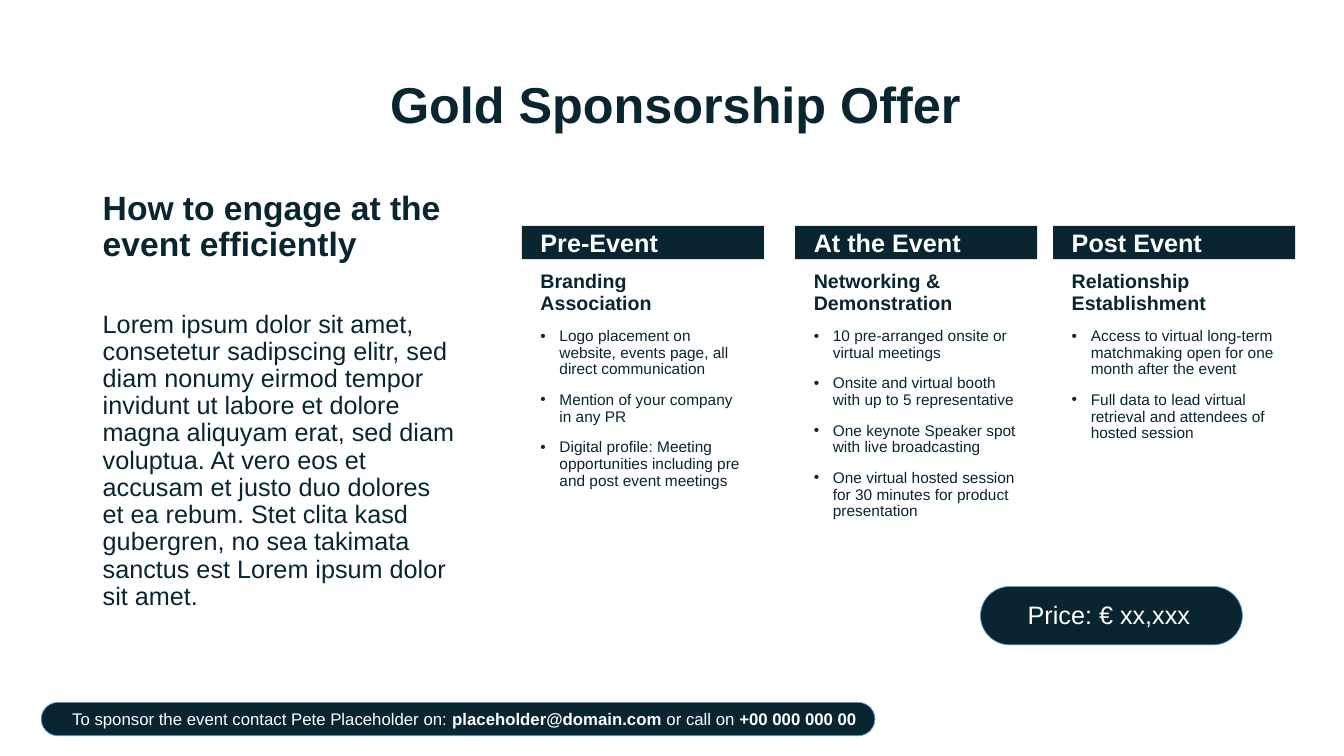
"""Build the sponsorship offer slide."""
from copy import deepcopy

from lxml import etree
from pptx import Presentation
from pptx.dml.color import RGBColor
from pptx.enum import shapes, text
from pptx.oxml import ns
from pptx.util import Cm, Pt

NAVY = RGBColor(0x08, 0x25, 0x30)
WHITE = RGBColor(0xFF, 0xFF, 0xFF)
OUTLINE = RGBColor(0x5B, 0x9B, 0xD5)

BAR_TOP = 5.69
HANGING = 0.48
PHASES = [
    (13.15, "Pre-Event", "Branding \vAssociation", [
        "Logo placement on website, events page, all direct communication",
        "Mention of your company in any PR",
        "Digital profile: Meeting opportunities including pre and post event meetings",
    ]),
    (20.04, "At the Event", "Networking & Demonstration", [
        "10 pre-arranged onsite or virtual meetings",
        "Onsite and virtual booth with up to 5 representative",
        "One keynote Speaker spot with live broadcasting",
        "One virtual hosted session \vfor 30 minutes for product presentation",
    ]),
    (26.54, "Post Event", "Relationship Establishment", [
        "Access to virtual long-term matchmaking open for one month after the event",
        "Full data to lead virtual retrieval and attendees of hosted session",
    ]),
]
LOREM = (
    "Lorem ipsum dolor sit amet, consetetur sadipscing elitr, sed diam nonumy "
    "eirmod tempor invidunt ut labore et dolore magna aliquyam erat, sed diam "
    "voluptua. At vero eos et accusam et justo duo dolores et ea rebum. Stet "
    "clita kasd gubergren, no sea takimata sanctus est Lorem ipsum dolor sit amet."
)


def add_frame(slide, left, top, width, height, anchor=text.MSO_ANCHOR.TOP):
    """Add a wrapping text box and return its text frame."""
    box = slide.shapes.add_textbox(Cm(left), Cm(top), Cm(width), Cm(height))
    frame = box.text_frame
    frame.word_wrap = True
    frame.vertical_anchor = anchor
    return frame


def add_bullet(paragraph):
    """Give the paragraph a round bullet with a hanging indent."""
    properties = paragraph._p.get_or_add_pPr()
    properties.set("marL", str(Cm(HANGING)))
    properties.set("indent", str(-Cm(HANGING)))
    font = etree.SubElement(properties, ns.qn("a:buFont"))
    font.set("typeface", "Arial")
    etree.SubElement(properties, ns.qn("a:buChar")).set("char", "•")


def write(frame, content, size=18, color=NAVY, bold=False, bullet=False, strong=()):
    """Write one paragraph, setting in bold the pieces listed in strong."""
    pieces = [content] if isinstance(content, str) else content
    first = not frame.paragraphs[0].runs
    paragraph = frame.paragraphs[0] if first else frame.add_paragraph()
    paragraph.line_spacing = 0.9
    if not first:
        paragraph.space_before = Pt(10)
    if bullet:
        add_bullet(paragraph)
    for index, piece in enumerate(pieces):
        for number, line in enumerate(piece.split("\v")):
            if number:
                paragraph.add_line_break()
            run = paragraph.add_run()
            run.text = line
            run.font.name = "Arial"
            run.font.size = Pt(size)
            run.font.color.rgb = color
            run.font.bold = bold or index in strong
    for line_break in paragraph._p.findall(ns.qn("a:br")):
        line_break.append(deepcopy(paragraph.runs[0].font._element))


def add_block(slide, kind, left, top, width, height):
    """Add a plain navy shape."""
    block = slide.shapes.add_shape(kind, Cm(left), Cm(top), Cm(width), Cm(height))
    block.shadow.inherit = False
    block.fill.solid()
    block.fill.fore_color.rgb = NAVY
    block.line.fill.background()
    return block


def add_pill(slide, left, top, width, height):
    """Add a fully rounded, outlined navy shape."""
    kind = shapes.MSO_SHAPE.ROUNDED_RECTANGLE
    pill = add_block(slide, kind, left, top, width, height)
    pill.adjustments[0] = 0.5
    pill.line.color.rgb = OUTLINE
    pill.line.width = Pt(0.5)


def add_phase(slide, left, name, goal, benefits):
    """Add one column with its header bar, goal and benefits."""
    add_block(slide, shapes.MSO_SHAPE.RECTANGLE, left, BAR_TOP, 6.1, 0.84)
    column = add_frame(slide, left + 0.22, BAR_TOP, 5.69, 10.57)
    write(column, name, color=WHITE, bold=True)
    write(column, goal, size=14, bold=True)
    for benefit in benefits:
        write(column, benefit, size=11, bullet=True)


def main():
    """Build and save the slide."""
    deck = Presentation()
    deck.slide_width, deck.slide_height = Cm(33.87), Cm(19.05)
    slide = deck.slides.add_slide(deck.slide_layouts[6])
    middle = text.MSO_ANCHOR.MIDDLE

    title = add_frame(slide, 9.58, 1.7, 18.42, 1.98, middle)
    write(title, "Gold Sponsorship Offer", size=36, bold=True)
    heading = add_frame(slide, 2.34, 4.7, 9.42, 2.51)
    write(heading, "How to engage at the event efficiently", size=24, bold=True)
    write(add_frame(slide, 2.34, 7.72, 9.42, 9.32), LOREM)

    for phase in PHASES:
        add_phase(slide, *phase)

    add_pill(slide, 24.71, 14.78, 6.6, 1.47)
    price = add_frame(slide, 25.65, 15.19, 4.83, 0.69, middle)
    write(price, "Price: € xx,xxx", color=WHITE)

    add_pill(slide, 1.04, 17.7, 21.01, 0.84)
    contact = add_frame(slide, 1.57, 17.81, 20.29, 0.66, middle)
    write(contact, [
        "To sponsor the event contact Pete Placeholder on: ",
        "placeholder@domain.com", " or call on ", "+00 000 000 00",
    ], size=12, color=WHITE, strong=(1, 3))

    deck.save("out.pptx")


if __name__ == "__main__":
    main()
